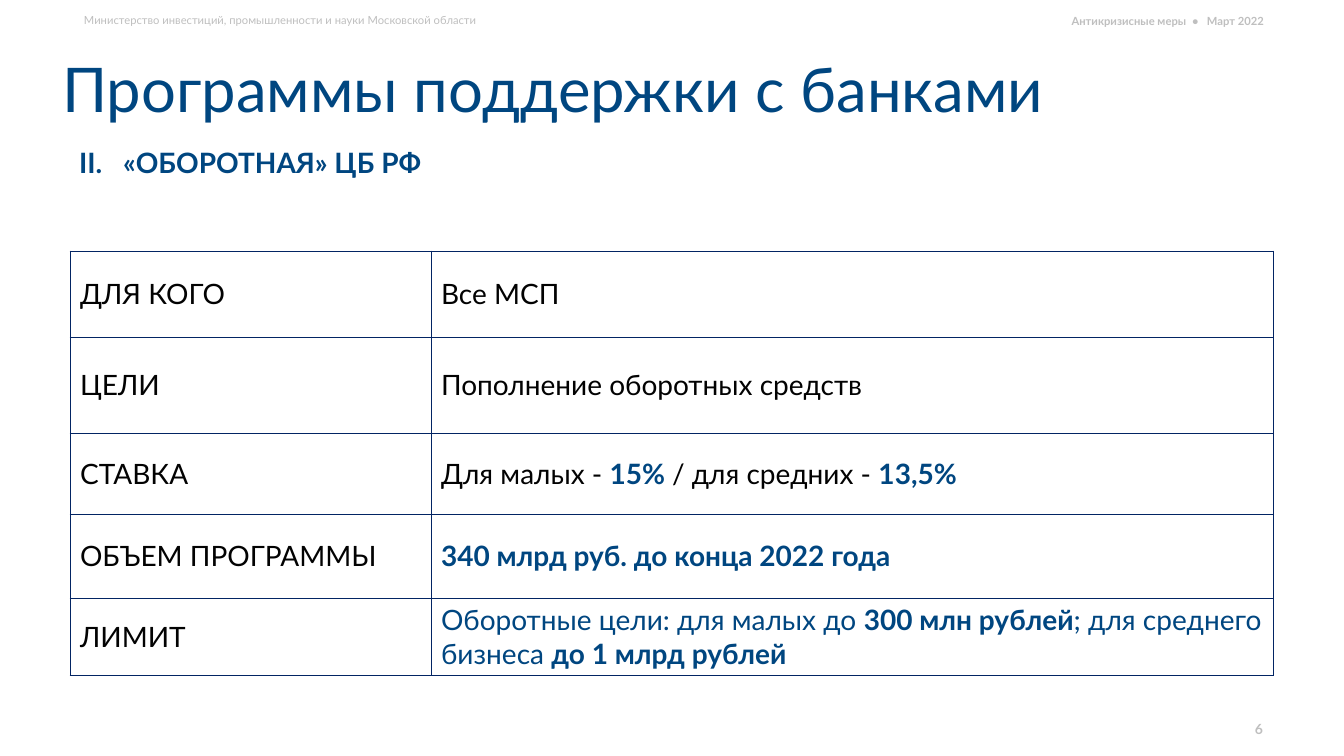
from lxml.etree import SubElement
from pptx import Presentation
from pptx.dml.color import RGBColor
from pptx.enum.text import MSO_ANCHOR as ANCHOR, MSO_AUTO_SIZE as AUTO, PP_ALIGN as ALIGN
from pptx.oxml.ns import qn
from pptx.util import Pt

COLORS = {"blue": "004680", "black": "020202", "grey": "BFBFBF", "border": "022463"}
PX = 914400 / 100.8


def emu(px):
    return round(px * PX)


class Deck:
    """Slide builder with one font, one palette and pixel lengths."""

    font = "Lato"

    def __init__(self, width, height):
        self.prs = Presentation()
        self.prs.slide_width, self.prs.slide_height = emu(width), emu(height)
        self.slide = self.prs.slides.add_slide(self.prs.slide_layouts[1])

    def style(self, r, size, color, bold=False):
        f = r.font
        f.name, f.size, f.bold = self.font, Pt(size), bold
        f.color.rgb = RGBColor.from_string(COLORS[color])

    def add_runs(self, p, runs, size):
        for text, color, bold in runs:
            r = p.add_run()
            r.text = text
            self.style(r, size, color, bold)

    def placeholder(self, idx, box, text, size, bold=False):
        sp = self.slide.placeholders[idx]
        sp.left, sp.top, sp.width, sp.height = map(emu, box)
        tf = sp.text_frame
        tf.text = text
        tf.auto_size, tf.vertical_anchor, tf.word_wrap = AUTO.NONE, ANCHOR.MIDDLE, True
        p = tf.paragraphs[0]
        p.alignment, p.line_spacing, p.space_before = ALIGN.LEFT, 0.9, Pt(0)
        self.style(p.runs[0], size, "blue", bold)
        return p

    def title(self, box, text):
        self.placeholder(0, box, text, 44)

    def roman_item(self, box, text, start, indent):
        p = self.placeholder(1, box, text, 20, True)
        pPr = p._p.get_or_add_pPr()
        pPr.set("marL", str(emu(indent)))
        pPr.set("indent", str(-emu(indent)))
        SubElement(pPr, qn("a:buFont"), typeface=self.font)
        SubElement(pPr, qn("a:buAutoNum"), type="romanUcPeriod", startAt=str(start))

    def label(self, box, runs, size, align=ALIGN.LEFT, anchor=ANCHOR.MIDDLE):
        tf = self.slide.shapes.add_textbox(*map(emu, box)).text_frame
        tf.word_wrap, tf.vertical_anchor = True, anchor
        p = tf.paragraphs[0]
        p.alignment = align
        self.add_runs(p, runs, size)
        return p

    def cell(self, cell, runs):
        cell.vertical_anchor = ANCHOR.MIDDLE
        tcPr = cell._tc.get_or_add_tcPr()
        for side in ("lnL", "lnR", "lnT", "lnB"):
            ln = SubElement(tcPr, qn(f"a:{side}"), w=str(Pt(0.5)))
            fill = SubElement(ln, qn("a:solidFill"))
            SubElement(fill, qn("a:srgbClr"), val=COLORS["border"])
        cell.fill.background()
        self.add_runs(cell.text_frame.paragraphs[0], runs, 20)

    def table(self, left, top, widths, heights, rows):
        box = (left, top, sum(widths), sum(heights))
        table = self.slide.shapes.add_table(len(rows), len(widths), *map(emu, box)).table
        table.first_row = table.horz_banding = False
        for column, width in zip(table.columns, widths):
            column.width = emu(width)
        for i, (height, (name, runs)) in enumerate(zip(heights, rows)):
            table.rows[i].height = emu(height)
            self.cell(table.cell(i, 0), [(name, "black", False)])
            self.cell(table.cell(i, 1), runs)


def main():
    deck = Deck(1344, 756)
    deck.label((74, 8, 570, 24),
               [("Министерство инвестиций, промышленности и науки Московской области",
                 "grey", False)], 8, anchor=ANCHOR.TOP)
    date = deck.label((820, 12, 454, 18),
                      [("Антикризисные меры", "grey", True), (" • ", "grey", True),
                       ("Март 2022", "grey", True)], 8, ALIGN.RIGHT)
    date.runs[1]._r.get_or_add_rPr().set("spc", "200")
    deck.label((971, 716, 302, 25), [("6", "grey", True)], 10, ALIGN.RIGHT)
    deck.title((52, 36, 1204, 114), "Программы поддержки с банками")
    deck.roman_item((69, 138, 1166, 52), "«ОБОРОТНАЯ» ЦБ РФ", 2, 44)
    deck.table(70, 251, (361, 842), (86, 96, 81, 84, 77), [
        ("ДЛЯ КОГО", [("Все МСП", "black", False)]),
        ("ЦЕЛИ", [("Пополнение оборотных средств", "black", False)]),
        ("СТАВКА", [("Для малых - ", "black", False), ("15% ", "blue", True),
                    ("/ для средних - ", "black", False), ("13,5%", "blue", True)]),
        ("ОБЪЕМ ПРОГРАММЫ", [("340 млрд руб. до конца 2022 года", "blue", True)]),
        ("ЛИМИТ", [("Оборотные цели: для малых до ", "blue", False),
                   ("300 млн рублей", "blue", True),
                   ("; для среднего бизнеса ", "blue", False),
                   ("до 1 млрд рублей", "blue", True)]),
    ])
    deck.prs.save("out.pptx")


if __name__ == "__main__":
    main()
